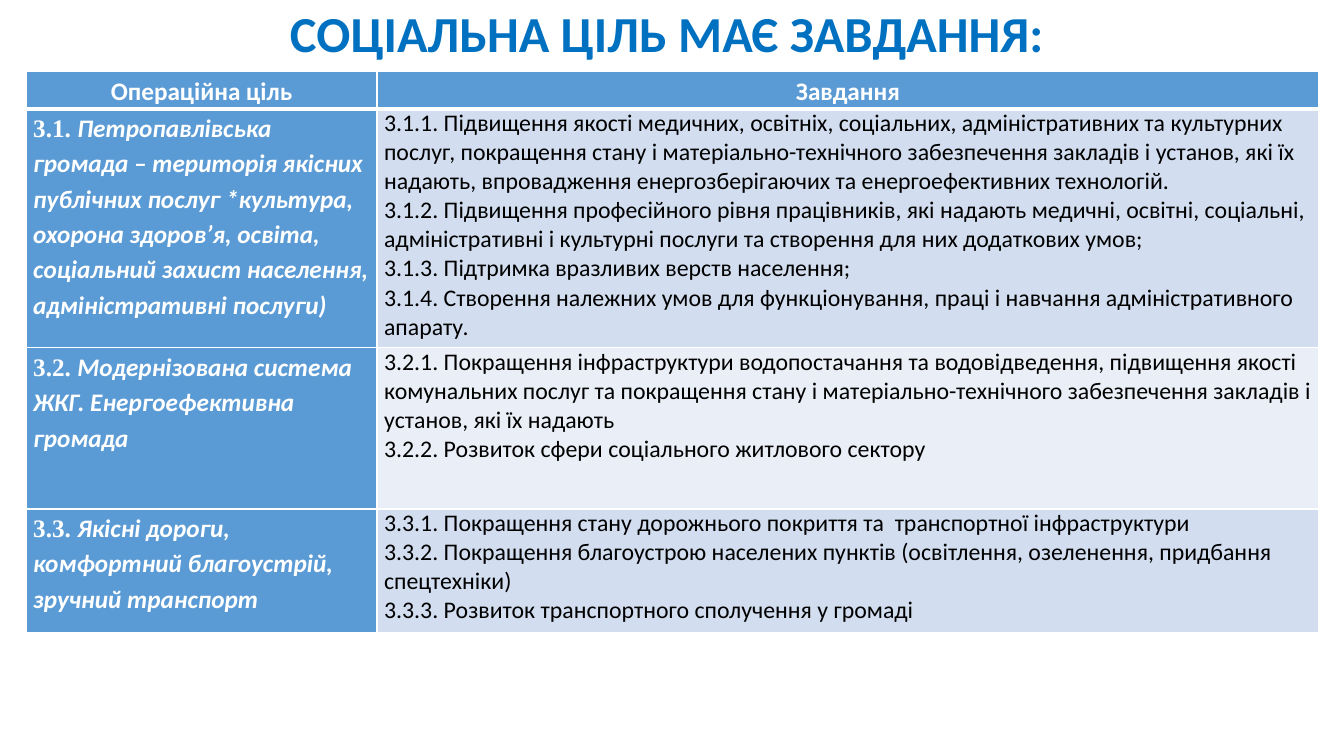
import dataclasses

import lxml.etree
import pptx
import pptx.dml.color
import pptx.enum.text
import pptx.oxml.ns
import pptx.util


@dataclasses.dataclass(frozen=True)
class Theme:
    font: str = "Calibri"
    serif: str = "Times New Roman"
    title: str = "0070C0"
    head: str = "5B9BD5"
    bands: tuple = ("D2DEEF", "EAEFF7")
    light: str = "FFFFFF"
    dark: str = "000000"
    big: int = 36
    mid: int = 18
    small: int = 17


THEME = Theme()
WIDE, HIGH = 13.33, 7.5
LEFT, TOP = 0.26, 0.71
COLS = (3.48, 9.34)
ROWS = (0.37, 2.37, 1.6, 1.23)
HEADS = ("Операційна ціль", "Завдання")
GOALS = (
    ("3.1. ",
     "Петропавлівська громада – територія якісних публічних послуг *культура, "
     "охорона здоров’я, освіта, соціальний захист населення, адміністративні послуги)",
     ("3.1.1. Підвищення якості медичних, освітніх, соціальних, адміністративних та "
      "культурних послуг, покращення стану і матеріально-технічного забезпечення "
      "закладів і установ, які їх надають, впровадження енергозберігаючих та "
      "енергоефективних технологій.",
      "3.1.2. Підвищення професійного рівня працівників, які надають медичні, освітні, "
      "соціальні, адміністративні і культурні послуги та створення для них додаткових умов;",
      "3.1.3. Підтримка вразливих верств населення;",
      "3.1.4. Створення належних умов для функціонування, праці і навчання "
      "адміністративного апарату.")),
    ("3.2. ",
     "Модернізована система ЖКГ. Енергоефективна громада",
     ("3.2.1. Покращення інфраструктури водопостачання та водовідведення, підвищення "
      "якості комунальних послуг та покращення стану і матеріально-технічного "
      "забезпечення закладів і установ, які їх надають",
      "3.2.2. Розвиток сфери соціального житлового сектору")),
    ("3.3. ",
     "Якісні дороги, комфортний благоустрій, зручний транспорт",
     ("3.3.1. Покращення стану дорожнього покриття та  транспортної інфраструктури",
      "3.3.2. Покращення благоустрою населених пунктів (освітлення, озеленення, "
      "придбання спецтехніки)",
      "3.3.3. Розвиток транспортного сполучення у громаді")),
)


def paint(tone):
    return pptx.dml.color.RGBColor.from_string(tone)


def add_run(para, text, size, tone, bold=False, slant=False, font=THEME.font):
    run = para.add_run()
    run.text = text
    run.font.size = pptx.util.Pt(size)
    run.font.name = font
    run.font.bold = bold
    run.font.italic = slant
    run.font.color.rgb = paint(tone)


def add_edge(cell, side, width):
    props = cell._tc.get_or_add_tcPr()
    name = pptx.oxml.ns.qn
    line = lxml.etree.SubElement(props, name(f"a:ln{side}"), w=str(pptx.util.Pt(width)))
    fill = lxml.etree.SubElement(line, name("a:solidFill"))
    lxml.etree.SubElement(fill, name("a:srgbClr"), val=THEME.light)


def dress(cell, tone, top=1, base=1):
    cell.margin_left = cell.margin_right = pptx.util.Inches(0.07)
    cell.margin_top = cell.margin_bottom = 0
    for side, width in (("L", 1), ("R", 1), ("T", top), ("B", base)):
        add_edge(cell, side, width)
    cell.fill.solid()
    cell.fill.fore_color.rgb = paint(tone)


def fill_head(cell, text):
    dress(cell, THEME.head, base=3)
    para = cell.text_frame.paragraphs[0]
    para.alignment = pptx.enum.text.PP_ALIGN.CENTER
    para.line_spacing = 1.15
    add_run(para, text, THEME.mid, THEME.light, bold=True)


def fill_goal(cell, mark, text, top):
    dress(cell, THEME.head, top)
    para = cell.text_frame.paragraphs[0]
    para.line_spacing = 1.15
    add_run(para, mark, THEME.mid, THEME.light, bold=True, font=THEME.serif)
    add_run(para, text, THEME.mid, THEME.light, bold=True, slant=True)


def fill_tasks(cell, tasks, tone, top):
    dress(cell, tone, top)
    frame = cell.text_frame
    for index, task in enumerate(tasks):
        para = frame.add_paragraph() if index else frame.paragraphs[0]
        add_run(para, task, THEME.small, THEME.dark)


def set_title(slide, text):
    title = slide.shapes.title
    title.left, title.top = pptx.util.Inches(LEFT), 0
    title.width = pptx.util.Inches(WIDE - 0.62)
    title.height = pptx.util.Inches(TOP)
    frame = title.text_frame
    frame.word_wrap = True
    frame.auto_size = pptx.enum.text.MSO_AUTO_SIZE.NONE
    frame.vertical_anchor = pptx.enum.text.MSO_ANCHOR.MIDDLE
    para = frame.paragraphs[0]
    para.alignment = pptx.enum.text.PP_ALIGN.CENTER
    para.line_spacing = 0.9
    add_run(para, text, THEME.big, THEME.title, bold=True)


def add_grid(slide):
    place = [pptx.util.Inches(x) for x in (LEFT, TOP, sum(COLS), sum(ROWS))]
    table = slide.shapes.add_table(len(ROWS), len(COLS), *place).table
    for col, width in zip(table.columns, COLS):
        col.width = pptx.util.Inches(width)
    for row, height in zip(table.rows, ROWS):
        row.height = pptx.util.Inches(height)
    for col, text in enumerate(HEADS):
        fill_head(table.cell(0, col), text)
    for row, (mark, goal, tasks) in enumerate(GOALS, 1):
        top = 3 if row == 1 else 1
        fill_goal(table.cell(row, 0), mark, goal, top)
        fill_tasks(table.cell(row, 1), tasks, THEME.bands[(row - 1) % 2], top)


def main():
    deck = pptx.Presentation()
    deck.slide_width = pptx.util.Inches(WIDE)
    deck.slide_height = pptx.util.Inches(HIGH)
    slide = deck.slides.add_slide(deck.slide_layouts[5])
    set_title(slide, "СОЦІАЛЬНА ЦІЛЬ МАЄ ЗАВДАННЯ:")
    add_grid(slide)
    deck.save("out.pptx")


if __name__ == "__main__":
    main()
